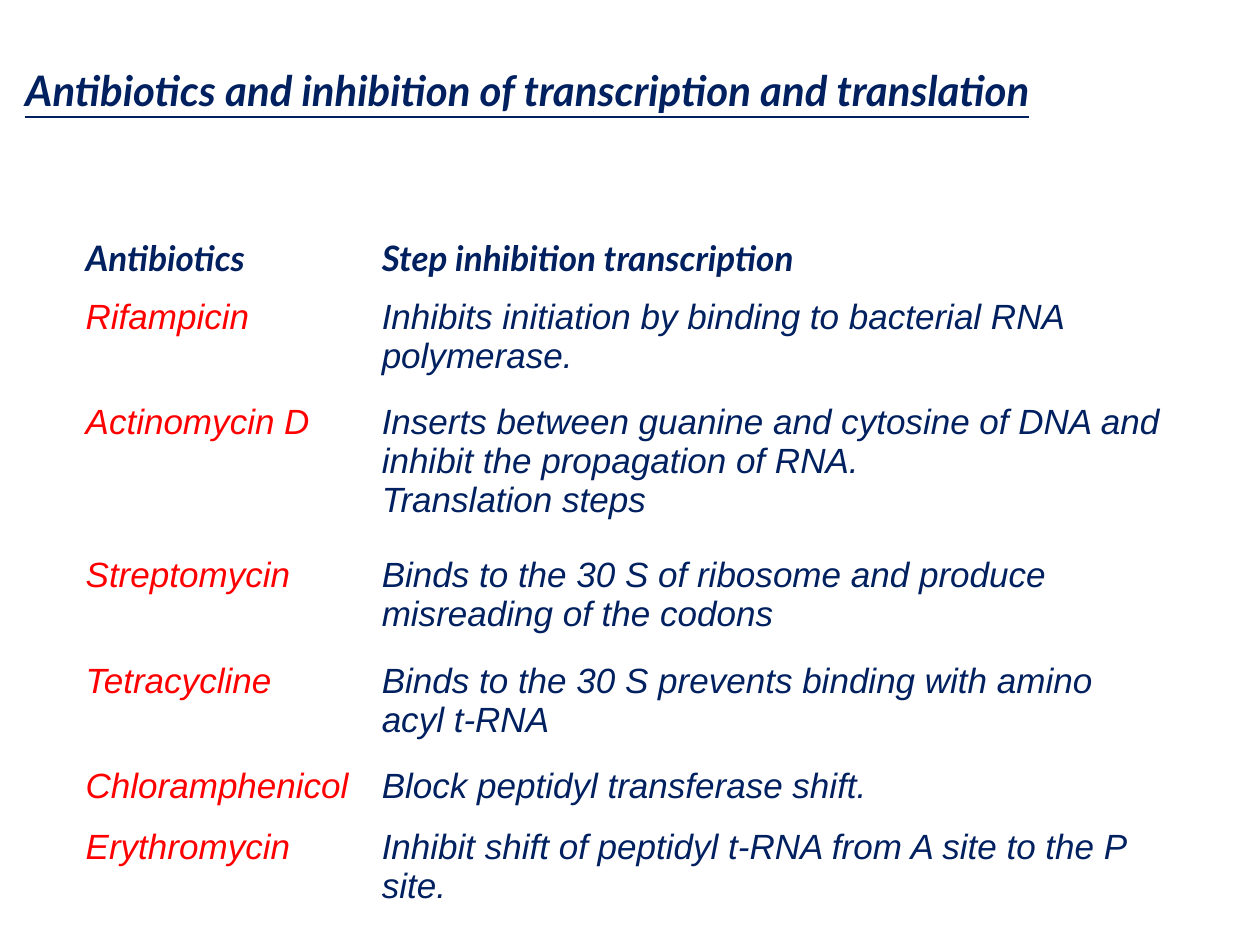
import pptx
import pptx.dml.color
import pptx.enum.text
import pptx.oxml.ns
import pptx.util
from pptx.util import Inches

NAVY = "002060"
RED = "FF0000"
NO_GRID_STYLE = "{2D5ABB26-0587-4C30-8999-92F81FD0307C}"

HEADERS = ("Antibiotics", "Step inhibition transcription")
ANTIBIOTICS = [
    ("Rifampicin", "Inhibits initiation by binding to bacterial RNA polymerase.", 0.84),
    ("Actinomycin D", "Inserts between guanine and cytosine of DNA and inhibit "
     "the propagation of RNA.\nTranslation steps", 1.21),
    ("Streptomycin", "Binds to the 30 S of ribosome and produce misreading of the codons", 0.84),
    ("Tetracycline", "Binds to the 30 S prevents binding with amino acyl t-RNA", 0.84),
    ("Chloramphenicol", "Block peptidyl transferase shift.", 0.48),
    ("Erythromycin", "Inhibit shift of peptidyl t-RNA from A site to the P site.", 0.84),
]


def color(value):
    return pptx.dml.color.RGBColor.from_string(value)


class Deck:
    heading_font = "Lato"
    body_font = "Arial"

    def __init__(self):
        self.prs = pptx.Presentation()
        self.prs.slide_width = Inches(10)
        self.prs.slide_height = Inches(7.5)
        self.s = self.prs.slides.add_slide(self.prs.slide_layouts[5])

    def set_text(self, tf, text, size, fill, heading=False, underline=None):
        tf.text = text
        for p in tf.paragraphs:
            p.alignment = pptx.enum.text.PP_ALIGN.LEFT
            for r in p.runs:
                r.font.name = self.heading_font if heading else self.body_font
                r.font.size = pptx.util.Pt(size)
                r.font.bold = heading
                r.font.italic = True
                r.font.underline = underline
                r.font.color.rgb = color(fill)

    def title(self, text, left, top, width, height):
        sp = self.s.shapes.title
        sp.left, sp.top = Inches(left), Inches(top)
        sp.width, sp.height = Inches(width), Inches(height)
        tf = sp.text_frame
        tf.word_wrap = True
        tf.auto_size = pptx.enum.text.MSO_AUTO_SIZE.NONE
        tf.vertical_anchor = pptx.enum.text.MSO_ANCHOR.MIDDLE
        self.set_text(tf, text, 24, NAVY, heading=True, underline=True)

    def table(self, rows, heights, widths, left, top):
        frame = self.s.shapes.add_table(
            len(rows), len(widths), Inches(left), Inches(top),
            Inches(sum(widths)), Inches(sum(heights)))
        table = frame.table
        table.horz_banding = False
        style = frame._element.find(".//" + pptx.oxml.ns.qn("a:tableStyleId"))
        style.text = NO_GRID_STYLE
        for column, width in zip(table.columns, widths):
            column.width = Inches(width)
        for i, (row, height) in enumerate(zip(rows, heights)):
            table.rows[i].height = Inches(height)
            for j, text in enumerate(row):
                cell = table.cell(i, j)
                cell.fill.background()
                fill = RED if i > 0 and j == 0 else NAVY
                self.set_text(cell.text_frame, text, 20, fill, heading=i == 0)


def main():
    deck = Deck()
    deck.title("Antibiotics and inhibition of transcription and translation",
               0.1, -0.08, 9.17, 1.58)
    rows = [HEADERS] + [(name, step) for name, step, _ in ANTIBIOTICS]
    heights = [0.48] + [height for _, _, height in ANTIBIOTICS]
    deck.table(rows, heights, (2.35, 6.4), 0.58, 1.83)
    deck.prs.save("out.pptx")


if __name__ == "__main__":
    main()
